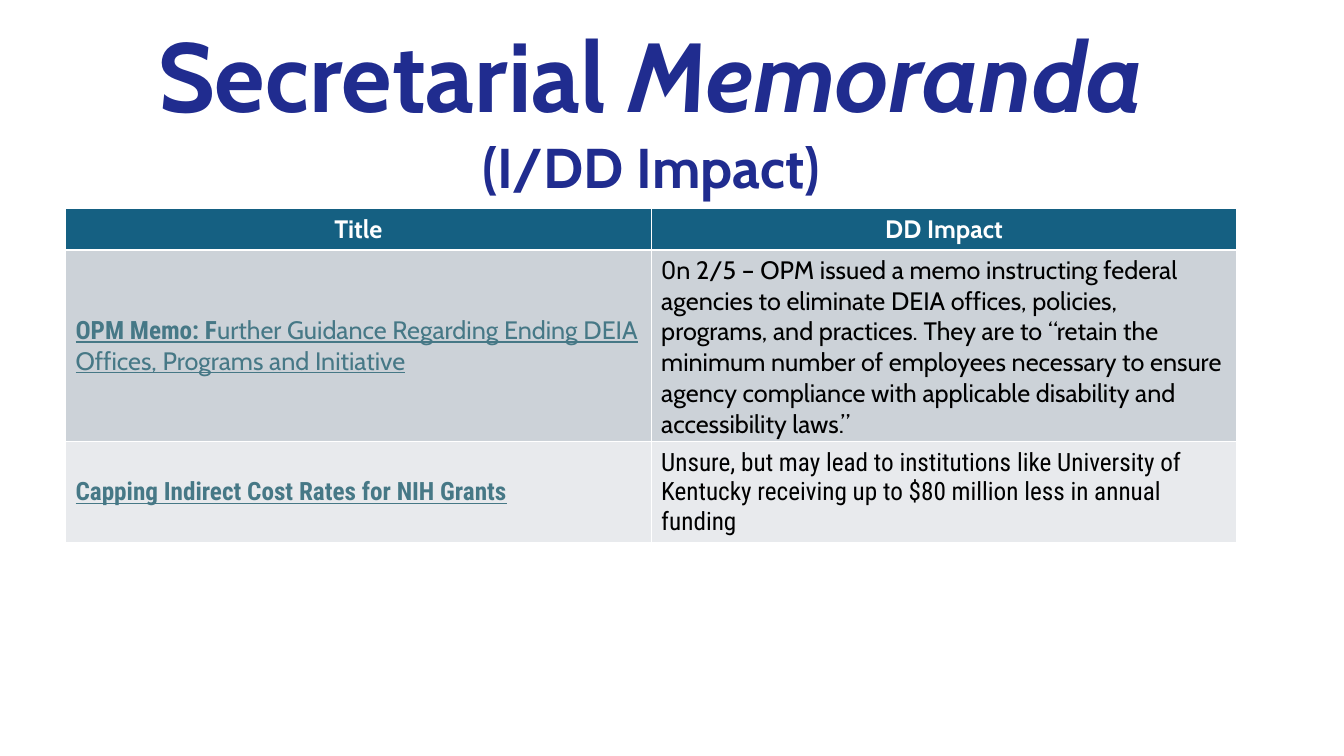
from pptx import Presentation
from pptx.dml.color import RGBColor
from pptx.enum.text import MSO_ANCHOR, PP_ALIGN
from pptx.oxml import parse_xml
from pptx.oxml.ns import nsdecls
from pptx.util import Cm, Pt

COLORS = {
    "navy": "202C8F",
    "teal": "156082",
    "link": "467886",
    "gray": "CCD2D8",
    "pale": "E8EAED",
    "white": "FFFFFF",
    "black": "000000",
}
CABIN, ROBOTO = "Cabin", "Roboto Condensed"


def add_text(paragraph, text, size=18, font=CABIN, color="black",
             bold=False, italic=False, underline=False):
    run = paragraph.add_run()
    run.text = text
    run.font.size = Pt(size)
    run.font.name = font
    run.font.color.rgb = RGBColor.from_string(COLORS[color])
    run.font.bold = bold
    run.font.italic = italic
    run.font.underline = underline


def style_cell(cell, fill):
    """Fill the cell, centre it vertically and draw thin white borders."""
    cell.vertical_anchor = MSO_ANCHOR.MIDDLE
    properties = cell._tc.get_or_add_tcPr()
    for side in ("lnL", "lnR", "lnT", "lnB"):
        properties.append(parse_xml(
            f'<a:{side} {nsdecls("a")} w="12700"><a:solidFill>'
            f'<a:srgbClr val="{COLORS["white"]}"/></a:solidFill></a:{side}>'))
    cell.fill.solid()
    cell.fill.fore_color.rgb = RGBColor.from_string(COLORS[fill])


prs = Presentation()
prs.slide_width, prs.slide_height = Cm(33.87), Cm(19.05)
slide = prs.slides.add_slide(prs.slide_layouts[6])

# Heading
heading = slide.shapes.add_textbox(Cm(2.87), Cm(0.25), Cm(27.08), Cm(4.95)).text_frame
heading.word_wrap = True
title = heading.paragraphs[0]
subtitle = heading.add_paragraph()
title.alignment = subtitle.alignment = PP_ALIGN.CENTER
add_text(title, "Secretarial ", size=70, color="navy", bold=True)
add_text(title, "Memoranda", size=70, color="navy", bold=True, italic=True)
add_text(subtitle, "(I/DD Impact)", size=40, color="navy", bold=True)

# Memoranda table: each cell is a list of (text, format) pairs
header = dict(color="white", bold=True)
link = dict(color="link", underline=True)
memo_rows = [
    (1.04, "teal", PP_ALIGN.CENTER, [
        [("Title", header)],
        [("DD Impact", header)],
    ]),
    (4.83, "gray", PP_ALIGN.LEFT, [
        [("OPM Memo: F", dict(link, font=ROBOTO, bold=True)),
         ("urther Guidance Regarding Ending DEIA Offices, Programs and Initiative", link)],
        [("O", dict(font=ROBOTO)),
         ("n 2/5 – OPM issued a memo instructing federal agencies to eliminate DEIA "
          "offices, policies, programs, and practices. They are to “retain the minimum "
          "number of employees necessary to ensure agency compliance with applicable "
          "disability and accessibility laws.”", {})],
    ]),
    (2.54, "pale", PP_ALIGN.LEFT, [
        [("Capping Indirect Cost Rates for NIH Grants", dict(link, font=ROBOTO, bold=True))],
        [("Unsure, but may lead to institutions like University of Kentucky receiving "
          "up to $80 million less in annual funding", dict(font=ROBOTO))],
    ]),
]
memos = slide.shapes.add_table(
    len(memo_rows), 2, Cm(1.65), Cm(5.26), Cm(29.52), Cm(8.41)).table
for row, (height, fill, alignment, cells) in zip(memos.rows, memo_rows):
    row.height = Cm(height)
    for cell, runs in zip(row.cells, cells):
        style_cell(cell, fill)
        paragraph = cell.text_frame.paragraphs[0]
        paragraph.alignment = alignment
        for text, text_format in runs:
            add_text(paragraph, text, **text_format)

prs.save("out.pptx")
